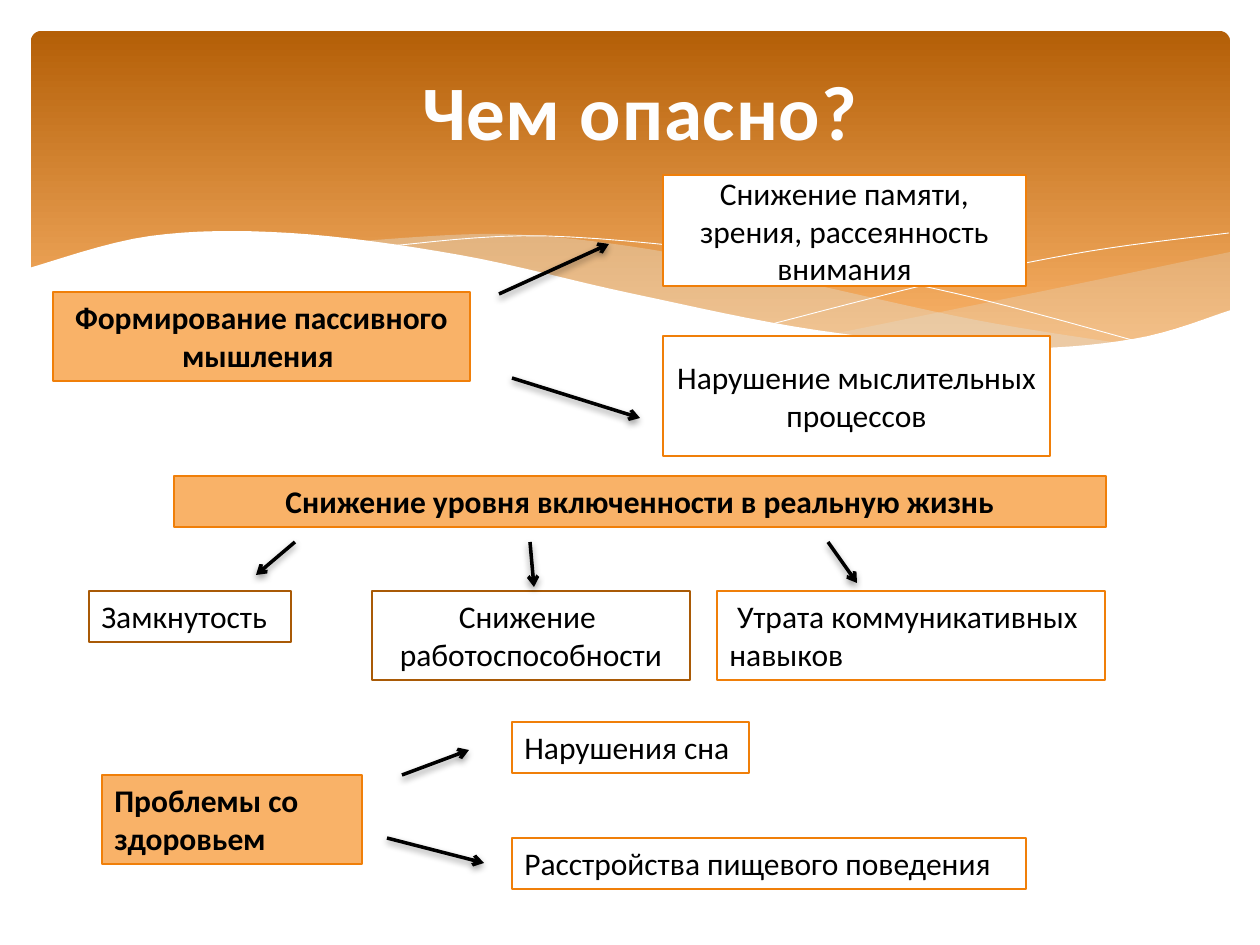
from dataclasses import dataclass
from itertools import chain

from lxml import etree
from pptx import Presentation
from pptx import util as u
from pptx.dml import color
from pptx.enum import shapes, text
from pptx.oxml import ns

PX = 914400 / 126
FONT = "Calibri"
STEPS = 8
COLORS = {
    "white": "FFFFFF", "title": "FEFEFE", "black": "000000", "sand": "E3DED1",
    "peach": "F9B268", "orange": "F07F09", "brown": "A95A06", "rust": "B45F07",
}
LEFT, CENTER = text.PP_ALIGN.LEFT, text.PP_ALIGN.CENTER
TOP, MIDDLE = text.MSO_ANCHOR.TOP, text.MSO_ANCHOR.MIDDLE
Point = tuple[int, int]


@dataclass
class Box:
    x: int
    y: int
    width: int
    height: int
    words: str
    fill: str | None = None
    line: str | None = "orange"
    weight: float = 0.75
    aligns: tuple = (LEFT,)
    anchor: text.MSO_ANCHOR = TOP
    size: int = 18
    bold: bool = False
    ink: str = "black"


@dataclass
class Arrow:
    x1: int
    y1: int
    x2: int
    y2: int


@dataclass
class Wave:
    edges: list[list[Point]]
    fill: str | None = None
    alpha: int = 100
    line: str | None = None


WAVES = [
    Wave([[(1230, 252), (1048, 290), (833, 334)],
          [(833, 334), (998, 349), (1120, 342), (1230, 311)]], "sand", 29),
    Wave([[(1125, 344), (976, 320), (793, 280), (648, 249), (503, 234), (360, 241)],
          [(360, 241), (509, 266), (757, 322), (910, 344), (1030, 350), (1125, 344)]],
         "sand", 40),
    Wave([[(389, 246), (546, 236), (766, 257), (958, 294), (1143, 343)]], line="white"),
    Wave([[(772, 324), (942, 281), (1091, 251), (1229, 233)]], line="white"),
    Wave([[(29, 268), (150, 236), (290, 233), (460, 255), (634, 294), (816, 330),
           (999, 348), (1133, 339), (1231, 310)], [(1231, 415), (29, 415)]], "white"),
]
TITLE = Box(73, 45, 1134, 129, "Чем опасно?", line=None, aligns=(CENTER,),
            anchor=MIDDLE, size=44, bold=True, ink="title")
BOXES = [
    Box(53, 292, 417, 89, "Формирование пассивного мышления ", "peach",
        aligns=(CENTER,), bold=True),
    Box(663, 175, 363, 111, "Снижение памяти, зрения, рассеянность внимания", "white",
        weight=1.25, aligns=(CENTER,), anchor=MIDDLE),
    Box(663, 336, 387, 120, "Нарушение мыслительных процессов", "white",
        weight=1.25, aligns=(CENTER,), anchor=MIDDLE),
    Box(174, 476, 932, 51, "Снижение уровня включенности в реальную жизнь", "peach",
        aligns=(CENTER,), bold=True),
    Box(717, 591, 388, 89, "Утрата коммуникативных \nнавыков", aligns=(CENTER, LEFT)),
    Box(89, 591, 202, 51, "Замкнутость", "white", "brown", 1.25),
    Box(372, 591, 318, 89, "Снижение \nработоспособности", "white", "brown", 1.25,
        (CENTER, CENTER)),
    Box(102, 775, 260, 89, "Проблемы со здоровьем", "peach", bold=True),
    Box(512, 722, 237, 51, "Нарушения сна"),
    Box(512, 838, 514, 51, "Расстройства пищевого поведения"),
]
ARROWS = [
    Arrow(499, 294, 609, 244), Arrow(512, 378, 640, 418),
    Arrow(295, 542, 256, 575), Arrow(828, 542, 857, 583), Arrow(530, 542, 534, 587),
    Arrow(402, 775, 469, 750), Arrow(387, 838, 484, 863),
]


def px(*lengths: int) -> list[u.Emu]:
    return [u.Emu(round(length * PX)) for length in lengths]


def rgb(name: str) -> color.RGBColor:
    return color.RGBColor.from_string(COLORS[name])


def spline(knots: list[Point]) -> list[tuple[float, float]]:
    padded = [knots[0], *knots, knots[-1]]
    points = [knots[0]]
    for quad in zip(padded, padded[1:], padded[2:], padded[3:]):
        for step in range(1, STEPS + 1):
            t = step / STEPS
            points.append(tuple(
                b + t * (c - a + t * (2 * a - 5 * b + 4 * c - d
                                      + t * (3 * (b - c) + d - a))) / 2
                for a, b, c, d in zip(*quad)))
    return points


def paint(shape, fill: str | None, line: str | None, weight: float = 0.75) -> None:
    shape.shadow.inherit = False
    if fill:
        shape.fill.solid()
        shape.fill.fore_color.rgb = rgb(fill)
    else:
        shape.fill.background()
    if line:
        shape.line.color.rgb = rgb(line)
        shape.line.width = u.Pt(weight)
    else:
        shape.line.fill.background()


def draw_banner(page) -> None:
    banner = page.shapes.add_shape(shapes.MSO_SHAPE.ROUNDED_RECTANGLE, *px(31, 31, 1199, 340))
    banner.adjustments[0] = 0.03
    paint(banner, None, None)
    banner.fill.gradient()
    banner.fill.gradient_angle = 270
    for stop, (position, name) in zip(banner.fill.gradient_stops, [(0, "rust"), (0.9, "peach")]):
        stop.position = position
        stop.color.rgb = rgb(name)


def draw_wave(page, wave: Wave) -> None:
    points = list(chain.from_iterable(map(spline, wave.edges)))
    builder = page.shapes.build_freeform(*px(*points[0]))
    builder.add_line_segments([px(*point) for point in points[1:]], close=wave.fill is not None)
    shape = builder.convert_to_shape()
    paint(shape, wave.fill, wave.line, 0.5)
    if wave.alpha < 100:
        tint = shape.fill._xPr.find(".//" + ns.qn("a:srgbClr"))
        etree.SubElement(tint, ns.qn("a:alpha"), val=str(wave.alpha * 1000))


def draw_box(page, box: Box) -> None:
    shape = page.shapes.add_shape(
        shapes.MSO_SHAPE.RECTANGLE, *px(box.x, box.y, box.width, box.height))
    paint(shape, box.fill, box.line, box.weight)
    frame = shape.text_frame
    frame.word_wrap = True
    frame.vertical_anchor = box.anchor
    frame.text = box.words
    for para, align in zip(frame.paragraphs, box.aligns):
        para.alignment = align
        for span in para.runs:
            span.font.name = FONT
            span.font.size = u.Pt(box.size)
            span.font.bold = box.bold
            span.font.color.rgb = rgb(box.ink)
            if box is TITLE:
                span.font._element.set("spc", "50")


def draw_arrow(page, arrow: Arrow) -> None:
    line = page.shapes.add_connector(
        shapes.MSO_CONNECTOR.STRAIGHT, *px(arrow.x1, arrow.y1, arrow.x2, arrow.y2))
    line.line.color.rgb = rgb("black")
    line.line.width = u.Pt(2)
    etree.SubElement(line.line._get_or_add_ln(), ns.qn("a:tailEnd"), type="arrow")
    effects = etree.SubElement(line._element.spPr, ns.qn("a:effectLst"))
    shadow = etree.SubElement(effects, ns.qn("a:outerShdw"), blurRad=str(int(u.Pt(4))),
                              dist=str(int(u.Pt(2))), dir="5400000", rotWithShape="0")
    tint = etree.SubElement(shadow, ns.qn("a:srgbClr"), val=COLORS["black"])
    etree.SubElement(tint, ns.qn("a:alpha"), val="38000")


def main() -> None:
    deck = Presentation()
    deck.slide_width, deck.slide_height = px(1260, 945)
    page = deck.slides.add_slide(deck.slide_layouts[6])
    draw_banner(page)
    for wave in WAVES:
        draw_wave(page, wave)
    for box in [TITLE, *BOXES]:
        draw_box(page, box)
    for arrow in ARROWS:
        draw_arrow(page, arrow)
    deck.save("out.pptx")


if __name__ == "__main__":
    main()
